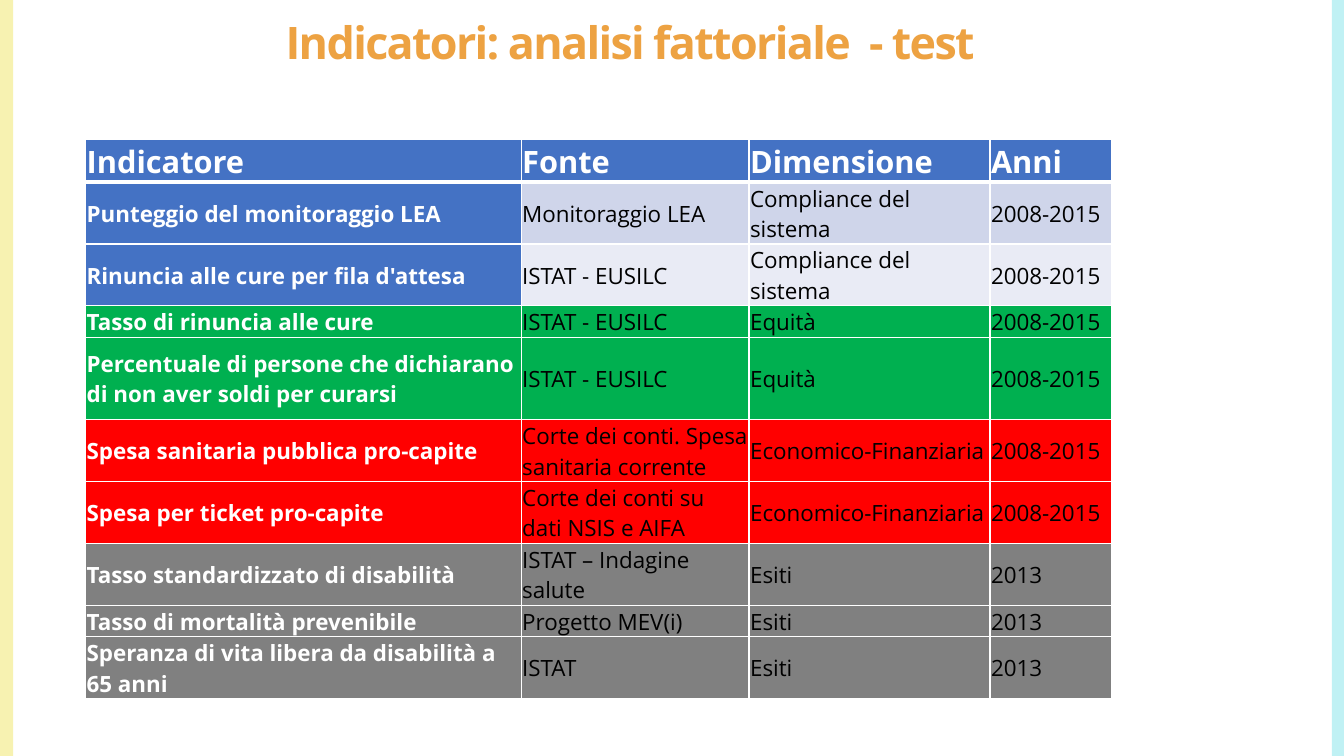
from lxml import etree
from pptx import Presentation
from pptx import util as u
from pptx.dml.color import RGBColor
from pptx.enum import shapes, text
from pptx.oxml.ns import qn

COLORS = {
    "yellow": "F7F2B1", "aqua": "C0F1F4", "orange": "EDA242",
    "white": "FFFFFF", "black": "000000", "blue": "4472C4",
    "band_dark": "CFD5EA", "band_light": "E9EBF5",
    "green": "00B050", "red": "FF0000", "gray": "808080",
}
FONT = "Open Sans"

COLUMN_WIDTHS = [4.32, 2.26, 2.39, 1.21]
HEADERS = ["Indicatore", "Fonte", "Dimensione", "Anni"]
HEADER_HEIGHT = 0.39

# Row height, fill of the first cell, fill of the others, wording
INDICATORS = [
    (0.56, "blue", "band_dark", ["Punteggio del monitoraggio LEA", "Monitoraggio LEA",
                                 "Compliance del sistema", "2008-2015"]),
    (0.56, "blue", "band_light", ["Rinuncia alle cure per fila d'attesa", "ISTAT - EUSILC",
                                  "Compliance del sistema", "2008-2015"]),
    (0.28, "green", "green", ["Tasso di rinuncia alle cure", "ISTAT - EUSILC",
                              "Equità", "2008-2015"]),
    (0.82, "green", "green", ["Percentuale di persone che dichiarano di non aver soldi per curarsi",
                              "ISTAT - EUSILC", "Equità", "2008-2015"]),
    (0.55, "red", "red", ["Spesa sanitaria pubblica pro-capite",
                          "Corte dei conti. Spesa sanitaria corrente",
                          "Economico-Finanziaria", "2008-2015"]),
    (0.55, "red", "red", ["Spesa per ticket pro-capite", "Corte dei conti su dati NSIS e AIFA",
                          "Economico-Finanziaria", "2008-2015"]),
    (0.55, "gray", "gray", ["Tasso standardizzato di disabilità", "ISTAT – Indagine salute",
                            "Esiti", "2013"]),
    (0.28, "gray", "gray", ["Tasso di mortalità prevenibile", "Progetto MEV(i)",
                            "Esiti", "2013"]),
    (0.55, "gray", "gray", ["Speranza di vita libera da disabilità a 65 anni", "ISTAT",
                            "Esiti", "2013"]),
]


class SlideBuilder:
    def __init__(self, page):
        self.page = page

    def color(self, name):
        return RGBColor.from_string(COLORS[name])

    def span(self, para, wording, size, color, bold):
        span = para.add_run()
        span.text = wording
        span.font.name = FONT
        span.font.size = u.Pt(size)
        span.font.bold = bold
        span.font.color.rgb = self.color(color)
        return span

    def stripe(self, left, color):
        box = self.page.shapes.add_shape(
            shapes.MSO_SHAPE.RECTANGLE, u.Inches(left), 0, u.Inches(0.13), u.Inches(7.5))
        box.shadow.inherit = False
        box.fill.solid()
        box.fill.fore_color.rgb = self.color(color)
        box.line.fill.background()

    def title(self, wording, left, top, width, height):
        box = self.page.shapes.title
        box.left, box.top = u.Inches(left), u.Inches(top)
        box.width, box.height = u.Inches(width), u.Inches(height)
        box.text_frame.vertical_anchor = text.MSO_ANCHOR.MIDDLE
        para = box.text_frame.paragraphs[0]
        para.alignment = text.PP_ALIGN.CENTER
        para.line_spacing = 0.9
        span = self.span(para, wording, 32, "orange", True)
        span.font._element.set("spc", "-120")

    def borders(self, cell, top, bottom):
        properties = cell._tc.get_or_add_tcPr()
        sides = {"a:lnL": 1, "a:lnR": 1, "a:lnT": top, "a:lnB": bottom}
        for place, (side, points) in enumerate(sides.items()):
            line = etree.Element(qn(side), w=str(u.Pt(points)))
            fill = etree.SubElement(line, qn("a:solidFill"))
            etree.SubElement(fill, qn("a:srgbClr"), val=COLORS["white"])
            properties.insert(place, line)

    def cell(self, cell, wording, fill, size, color, bold):
        cell.fill.solid()
        cell.fill.fore_color.rgb = self.color(fill)
        cell.vertical_anchor = text.MSO_ANCHOR.MIDDLE
        cell.margin_left = cell.margin_right = cell.margin_top = u.Inches(0.01)
        cell.margin_bottom = 0
        self.span(cell.text_frame.paragraphs[0], wording, size, color, bold)

    def table(self, left, top):
        heights = [HEADER_HEIGHT] + [row[0] for row in INDICATORS]
        table = self.page.shapes.add_table(
            len(heights), len(HEADERS), u.Inches(left), u.Inches(top),
            u.Inches(sum(COLUMN_WIDTHS)), u.Inches(sum(heights))).table
        for column, width in zip(table.columns, COLUMN_WIDTHS):
            column.width = u.Inches(width)
        for row, height in zip(table.rows, heights):
            row.height = u.Inches(height)

        # Header row
        for col, wording in enumerate(HEADERS):
            cell = table.cell(0, col)
            self.cell(cell, wording, "blue", 22, "white", True)
            self.borders(cell, 1, 3)

        # Indicator rows
        for row, (_, first_fill, other_fill, wordings) in enumerate(INDICATORS, 1):
            for col, wording in enumerate(wordings):
                cell = table.cell(row, col)
                first = col == 0
                self.cell(cell, wording, first_fill if first else other_fill, 16,
                          "white" if first else "black", first)
                self.borders(cell, 3 if row == 1 else 1, 1)


def main():
    deck = Presentation()
    deck.slide_width, deck.slide_height = u.Inches(13.33), u.Inches(7.5)
    page = deck.slides.add_slide(deck.slide_layouts[5])
    builder = SlideBuilder(page)

    # Side stripes
    builder.stripe(0, "yellow")
    builder.stripe(13.21, "aqua")

    # Title and table of indicators
    builder.title("Indicatori: analisi fattoriale  - test", 0.35, 0.06, 11.8, 0.77)
    builder.table(0.85, 1.38)

    deck.save("out.pptx")


if __name__ == "__main__":
    main()
